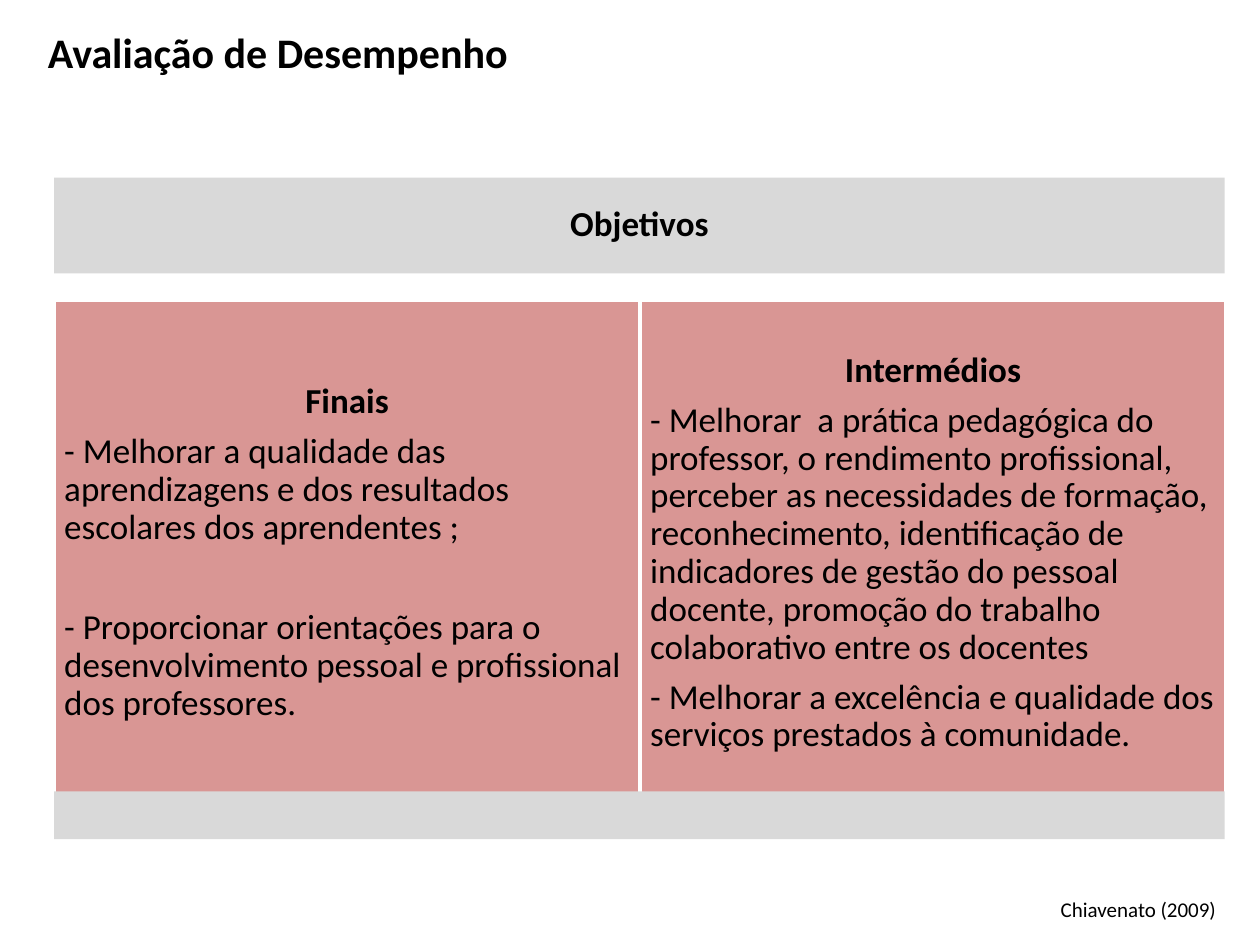
from pptx import Presentation
from pptx.dml.color import RGBColor
from pptx.enum.shapes import MSO_SHAPE
from pptx.enum.text import MSO_ANCHOR, PP_ALIGN
from pptx.util import Inches, Pt

COLORS = {"text": "000000", "band": "D9D9D9", "panel": "D99694", "line": "FFFFFF"}
LEFT, WIDTH = 0.43, 9.29
PANEL_W = 4.65


def add_run(p, text, size, bold=False):
    r = p.add_run()
    r.text = text
    r.font.name = "Calibri"
    r.font.size = Pt(size)
    r.font.bold = bold
    r.font.color.rgb = RGBColor.from_string(COLORS["text"])


def add_box(left, top, width, height, fill, paragraphs=()):
    sp = s.shapes.add_shape(MSO_SHAPE.RECTANGLE, Inches(left), Inches(top),
                            Inches(width), Inches(height))
    sp.shadow.inherit = False
    sp.fill.solid()
    sp.fill.fore_color.rgb = RGBColor.from_string(COLORS[fill])
    sp.line.fill.background()
    tf = sp.text_frame
    tf.word_wrap = True
    tf.vertical_anchor = MSO_ANCHOR.MIDDLE
    tf.margin_left = tf.margin_right = Inches(0.08)
    tf.margin_top = tf.margin_bottom = Inches(0.08)
    for i, (text, gap) in enumerate(paragraphs):
        p = tf.add_paragraph() if i else tf.paragraphs[0]
        p.alignment = PP_ALIGN.LEFT if i else PP_ALIGN.CENTER
        p.line_spacing = 0.9
        p.space_after = Pt(gap)
        add_run(p, text, 20, bold=i == 0)
    return sp


prs = Presentation()
prs.slide_width, prs.slide_height = Inches(10), Inches(7.5)
s = prs.slides.add_slide(prs.slide_layouts[5])

add_box(LEFT, 1.41, WIDTH, 0.76, "band", [("Objetivos", 7)])

panels = [
    [("Finais", 7),
     ("- Melhorar a qualidade das aprendizagens e dos resultados escolares "
      "dos aprendentes ;", 35.6),
     ("- Proporcionar orientações para o desenvolvimento pessoal e "
      "profissional dos professores.", 7)],
    [("Intermédios", 7),
     ("- Melhorar  a prática pedagógica do professor, o rendimento "
      "profissional,  perceber as necessidades de formação, reconhecimento, "
      "identificação de indicadores de gestão do pessoal docente, promoção "
      "do trabalho colaborativo entre os docentes", 7),
     ("- Melhorar a excelência e qualidade dos serviços prestados à "
      "comunidade.", 7)],
]
for i, paragraphs in enumerate(panels):
    panel = add_box(LEFT + i * PANEL_W, 2.38, PANEL_W, 4.02, "panel", paragraphs)
    panel.line.color.rgb = RGBColor.from_string(COLORS["line"])
    panel.line.width = Pt(2)

add_box(LEFT, 6.28, WIDTH, 0.38, "band")

title = s.shapes.title
title.left, title.top = Inches(0.28), Inches(0.16)
title.width, title.height = Inches(3.89), Inches(0.5)
title.text_frame.word_wrap = False
title.text_frame.vertical_anchor = MSO_ANCHOR.TOP
p = title.text_frame.paragraphs[0]
p.alignment = PP_ALIGN.LEFT
add_run(p, "Avaliação de Desempenho", 24, bold=True)

citation = s.shapes.add_textbox(Inches(8.32), Inches(7.07), Inches(1.49), Inches(0.3))
citation.text_frame.word_wrap = False
add_run(citation.text_frame.paragraphs[0], "Chiavenato (2009)", 12)

prs.save("out.pptx")
